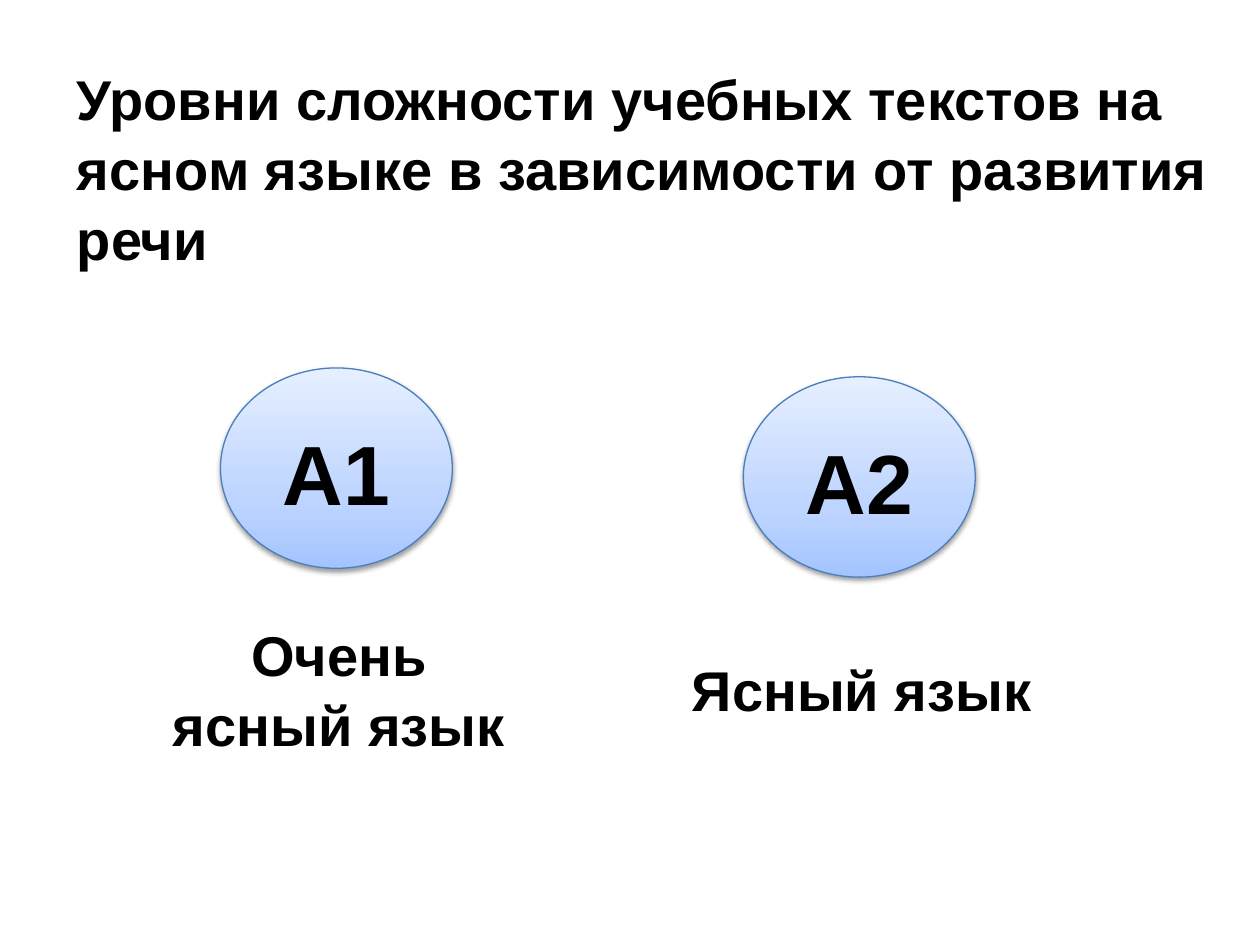
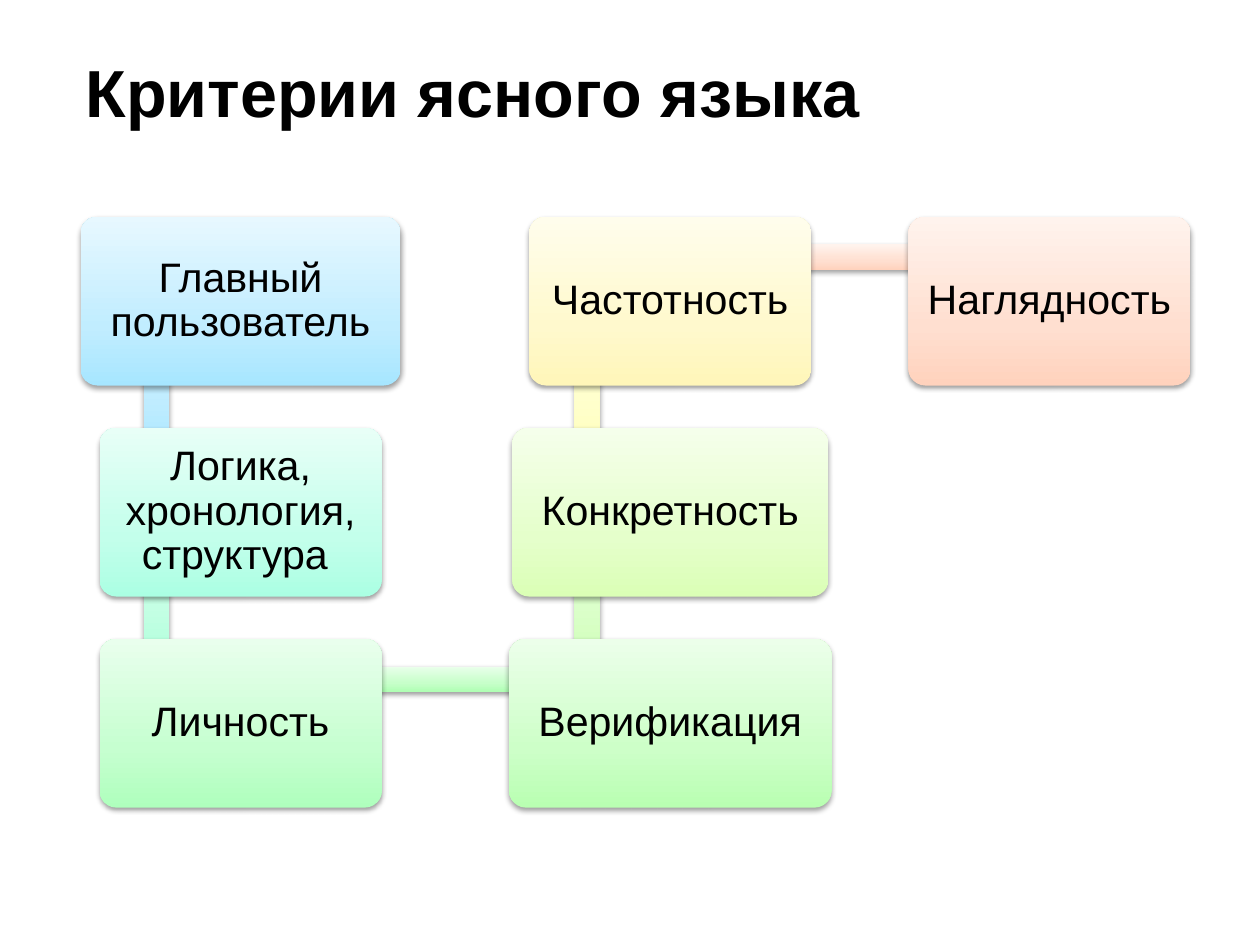
import pptx
import pptx.util
import pptx.dml.color
import pptx.enum.shapes
import pptx.enum.text
import pptx.oxml.ns
from lxml import etree

Inches, Pt = pptx.util.Inches, pptx.util.Pt
RGB = pptx.dml.color.RGBColor
SHAPE = pptx.enum.shapes.MSO_SHAPE
ALIGN = pptx.enum.text.PP_ALIGN
ANCHOR = pptx.enum.text.MSO_ANCHOR
qn = pptx.oxml.ns.qn

FONT = "Arial"
TITLE_ONLY = 5
COLORS = {
    "text": "000000", "shadow": "000000", "outline": "4B7EBC",
    "level": "A4C4FF", "user": "A7E6FF", "logic": "ABFFE3",
    "logic_bar": "ACFFD9", "person": "AFFFBD", "person_bar": "B0FFB4",
    "verify": "B9FFB2", "verify_bar": "CCFFB4", "concrete": "DBFFB6",
    "concrete_bar": "FFFFB9", "frequency": "FFF6B9", "visual": "FFD2BD",
}

# Criteria grid: column centres, row tops and sizes in inches
COLUMNS = [1.91, 5.32, 8.33]
BAR_X = [1.14, 4.56]
ROW_TOP, ROW_STEP = 1.72, 1.675
BOX_HEIGHT, BAR_WIDTH = 1.34, 0.2


def row_top(row):
    return ROW_TOP + row * ROW_STEP


def tint(color, share):
    """Mix a colour with white, keeping the given share of its distance."""
    return "".join(f"{round(255 - (255 - c) * share):02X}" for c in RGB.from_string(color))


def write(tf, lines, size, bold=False, align=ALIGN.CENTER, anchor=ANCHOR.MIDDLE, spacing=1.0):
    tf.word_wrap = True
    tf.auto_size = pptx.enum.text.MSO_AUTO_SIZE.NONE
    tf.vertical_anchor = anchor
    p = tf.paragraphs[0]
    p.alignment = align
    p.line_spacing = spacing
    for i, line in enumerate(lines):
        if i:
            p.add_line_break()
        r = p.add_run()
        r.text = line
        r.font.name, r.font.size, r.font.bold = FONT, Pt(size), bold
        r.font.color.rgb = RGB.from_string(COLORS["text"])


def add_titled_slide(prs, text, size, box):
    s = prs.slides.add_slide(prs.slide_layouts[TITLE_ONLY])
    title = s.shapes.title
    title.left, title.top, title.width, title.height = map(Inches, box)
    write(title.text_frame, [text], size, True, ALIGN.LEFT, ANCHOR.TOP, 1.04)
    return s


def set_gradient(sp, color):
    """Base colour at the bottom, fading to a pale tint at the top."""
    sp.fill.gradient()
    sp.fill.gradient_angle = 90
    stops = sp._element.spPr.find(".//" + qn("a:gsLst"))
    for stop in list(stops):
        stops.remove(stop)
    for pos, share in ((0, 1), (35, 0.71), (100, 0.27)):
        stop = etree.SubElement(stops, qn("a:gs"), pos=str(pos * 1000))
        etree.SubElement(stop, qn("a:srgbClr"), val=tint(color, share))


def set_shadow(sp):
    sp.shadow.inherit = False
    effects = sp._element.spPr.find(qn("a:effectLst"))
    shadow = etree.SubElement(effects, qn("a:outerShdw"), blurRad=str(Pt(3.1)),
                              dist=str(Pt(1.6)), dir="5400000", rotWithShape="0")
    color = etree.SubElement(shadow, qn("a:srgbClr"), val=COLORS["shadow"])
    etree.SubElement(color, qn("a:alpha"), val="38000")


def add_glossy(s, kind, box, color, outline=None):
    sp = s.shapes.add_shape(kind, *map(Inches, box))
    set_gradient(sp, COLORS[color])
    if outline:
        sp.line.color.rgb = RGB.from_string(COLORS[outline])
        sp.line.width = Pt(0.75)
    else:
        sp.line.fill.background()
    set_shadow(sp)
    return sp


def add_level(s, name, caption, left, top, caption_left):
    sp = add_glossy(s, SHAPE.OVAL, (left, top, 1.84, 1.59), "level", "outline")
    sp.text_frame.margin_top = Inches(0.11)
    write(sp.text_frame, [name], 48, True)
    label = s.shapes.add_textbox(*map(Inches, (caption_left, 4.8, 3.1, 1.31)))
    write(label.text_frame, caption, 32, True, spacing=1.04)


def add_down_bar(s, col, row, color):
    add_glossy(s, SHAPE.RECTANGLE, (BAR_X[col], row_top(row) + 0.32, BAR_WIDTH, 1.67), color)


def add_across_bar(s, left, row, width, color):
    add_glossy(s, SHAPE.RECTANGLE, (left, row_top(row) + 0.22, width, BAR_WIDTH), color)


def add_criterion(s, text, col, row, width, color):
    box = (COLUMNS[col] - width / 2, row_top(row), width, BOX_HEIGHT)
    sp = add_glossy(s, SHAPE.ROUNDED_RECTANGLE, box, color)
    sp.adjustments[0] = 0.1
    tf = sp.text_frame
    tf.margin_left = tf.margin_right = tf.margin_top = tf.margin_bottom = Inches(0.11)
    write(tf, [text], 23.5, spacing=0.9)


def build_levels(prs):
    s = add_titled_slide(
        prs, "Уровни сложности учебных текстов на ясном языке в зависимости от развития речи",
        32, (0.51, 0.44, 9.29, 1.72))
    add_level(s, "А1", ["Очень", "ясный язык"], 1.75, 2.92, 1.14)
    add_level(s, "А2", ["Ясный язык"], 5.9, 2.99, 5.29)


def build_criteria(prs):
    s = add_titled_slide(prs, "Критерии ясного языка", 38, (0.58, 0.33, 8.88, 0.74))

    # Bars run behind the boxes
    for col, row, color in ((0, 0, "user"), (0, 1, "logic_bar"),
                            (1, 1, "verify_bar"), (1, 0, "concrete_bar")):
        add_down_bar(s, col, row, color)
    add_across_bar(s, 1.25, 2, 3.4, "person_bar")
    add_across_bar(s, 4.66, 0, 3, "visual")

    # Boxes snake down, up and across
    for criterion in (
        ("Главный пользователь", 0, 0, 2.54, "user"),
        ("Логика, хронология, структура ", 0, 1, 2.24, "logic"),
        ("Личность", 0, 2, 2.24, "person"),
        ("Верификация", 1, 2, 2.56, "verify"),
        ("Конкретность", 1, 1, 2.51, "concrete"),
        ("Частотность", 1, 0, 2.24, "frequency"),
        ("Наглядность", 2, 0, 2.24, "visual"),
    ):
        add_criterion(s, *criterion)


def main():
    prs = pptx.Presentation()
    prs.slide_width, prs.slide_height = Inches(10), Inches(7.5)
    build_levels(prs)
    build_criteria(prs)
    prs.save("out.pptx")


if __name__ == "__main__":
    main()
